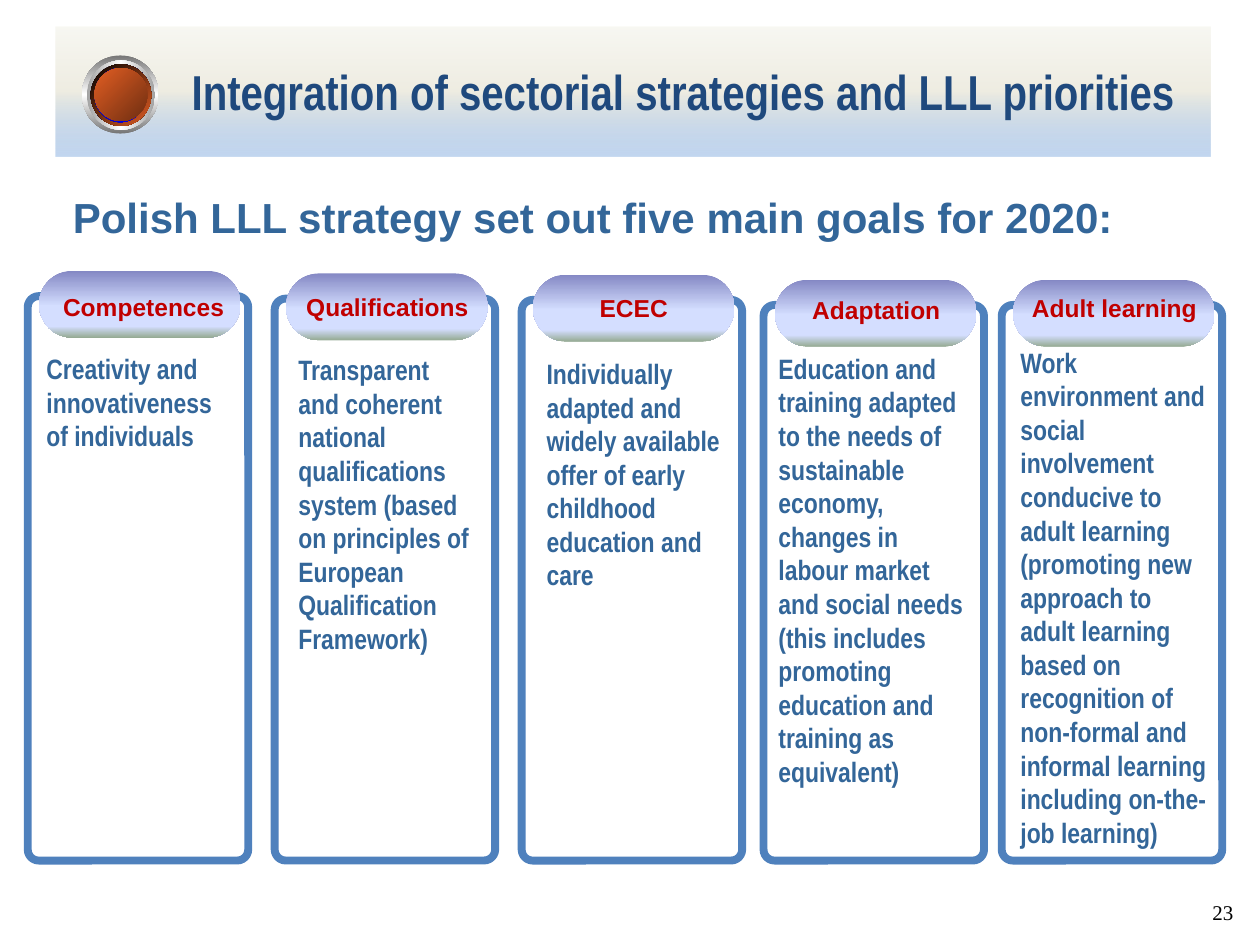
from dataclasses import dataclass
from typing import NamedTuple

from lxml import etree
from pptx import Presentation
from pptx import util as u
from pptx.dml.color import RGBColor
from pptx.enum import shapes, text
from pptx.oxml.ns import qn

COLUMNS, ROWS = 100, 75
CELL = u.Inches(0.1)

NAVY = RGBColor(0x1F, 0x49, 0x7D)
STEEL = RGBColor(0x33, 0x66, 0x99)
FRAME_BLUE = RGBColor(0x4F, 0x81, 0xBD)
RED = RGBColor(0xC0, 0x00, 0x00)
BLACK = RGBColor(0x00, 0x00, 0x00)
WHITE = RGBColor(0xFF, 0xFF, 0xFF)
BANNER_BLUE = RGBColor(0x8B, 0xB2, 0xE2)
CREAM = RGBColor(0xEE, 0xEC, 0xE1)
PALE_CREAM = RGBColor(0xF7, 0xF7, 0xF2)
VIOLET = RGBColor(0x84, 0x88, 0xC4)
LAVENDER = RGBColor(0xD4, 0xDE, 0xFF)
SAGE = RGBColor(0x96, 0xAB, 0x94)
DARK_GREY = RGBColor(0x76, 0x76, 0x76)
GREY = RGBColor(0xA2, 0xA2, 0xA2)
BLUE = RGBColor(0x00, 0x00, 0xFF)
DARK_BLUE = RGBColor(0x00, 0x00, 0xC3)
ORANGE = RGBColor(0xE3, 0x5E, 0x23)
BROWN = RGBColor(0x6E, 0x2E, 0x11)


class Box(NamedTuple):
    column: float
    row: float
    columns: float
    rows: float

    def lengths(self) -> list[int]:
        return [round(value * CELL) for value in self]


class Stop(NamedTuple):
    position: int
    color: RGBColor
    opacity: int = 100


@dataclass(frozen=True)
class Gradient:
    angle: int
    stops: tuple[Stop, ...]


@dataclass(frozen=True)
class Style:
    name: str
    size: int
    color: RGBColor
    bold: bool = True
    alignment: text.PP_ALIGN = text.PP_ALIGN.LEFT


@dataclass(frozen=True)
class Goal:
    column: float
    row: float
    heading: str
    heading_box: Box
    body: str
    body_box: Box


@dataclass(frozen=True)
class Ring:
    box: Box
    gradient: Gradient


CENTER = text.PP_ALIGN.CENTER
TITLE = Style("Arial Narrow", 28, NAVY, alignment=CENTER)
SUBTITLE = Style("Arial", 24, STEEL)
HEADING = Style("Arial", 14, RED, alignment=CENTER)
BODY = Style("Arial Narrow", 16, STEEL)
NUMBER = Style("Times New Roman", 12, BLACK, False, CENTER)

BANNER = Gradient(270, (Stop(0, BANNER_BLUE, 52), Stop(50, CREAM), Stop(100, PALE_CREAM)))
PILL = Gradient(90, (Stop(0, VIOLET), Stop(53, LAVENDER), Stop(83, LAVENDER), Stop(100, SAGE)))

CARD_BOTTOM = 68.3
CARD_WIDTH = 17.5
PILL_WIDTH, PILL_HEIGHT = 16, 5.3
PILL_INSET, PILL_RISE = 0.9, 2

GOALS = (
    Goal(2.2, 23.5, "Competences", Box(3.4, 22.7, 16, 5.1),
         "Creativity and innovativeness of individuals", Box(2.7, 27.4, 16.5, 9.1)),
    Goal(21.8, 23.7, "Qualifications", Box(23, 22.7, 15.5, 3),
         "Transparent and coherent national qualifications system (based on principles "
         "of European Qualification Framework)", Box(22.7, 27.5, 16, 25.2)),
    Goal(41.4, 23.8, "ECEC", Box(43.6, 22.8, 13.4, 4.7),
         "Individually adapted and widely available offer of early childhood education "
         "and care", Box(42.4, 27.8, 16, 19.9)),
    Goal(60.6, 24.2, "Adaptation", Box(61.6, 22.9, 15.9, 3),
         "Education and training adapted to the needs of sustainable economy, changes in "
         "labour market and social needs (this includes promoting education and training "
         "as equivalent)", Box(60.8, 27.4, 16.7, 36)),
    Goal(79.5, 24.2, "Adult learning", Box(79.7, 22.8, 17.5, 3),
         "Work environment and social involvement conducive to adult learning (promoting "
         "new approach to adult learning based on recognition of non-formal and informal "
         "learning including on-the- job learning)", Box(80, 26.9, 16.9, 41.4)),
)

RINGS = (
    Ring(Box(6.5, 4.4, 6.1, 6.2),
         Gradient(90, (Stop(0, DARK_GREY), Stop(50, WHITE), Stop(100, DARK_GREY)))),
    Ring(Box(6.9, 4.8, 5.4, 5.5),
         Gradient(0, (Stop(0, GREY), Stop(50, WHITE), Stop(100, GREY)))),
    Ring(Box(7.2, 5.1, 4.8, 4.9),
         Gradient(45, (Stop(0, WHITE), Stop(50, BLUE), Stop(100, WHITE)))),
    Ring(Box(7.2, 5.1, 4.8, 4.9), Gradient(45, (Stop(0, BLACK), Stop(100, ORANGE)))),
    Ring(Box(7.5, 5.4, 4.1, 4.3),
         Gradient(315, (Stop(0, DARK_BLUE), Stop(50, BLUE), Stop(100, DARK_BLUE)))),
    Ring(Box(7.5, 5.4, 4.2, 4.2), Gradient(45, (Stop(0, ORANGE), Stop(100, BROWN)))),
)


def apply_gradient(shape, gradient: Gradient) -> None:
    shape.fill.gradient()
    fill = shape.fill._xPr.find(qn("a:gradFill"))
    for child in list(fill):
        fill.remove(child)
    stop_list = etree.SubElement(fill, qn("a:gsLst"))
    for stop in gradient.stops:
        entry = etree.SubElement(stop_list, qn("a:gs"), pos=str(stop.position * 1000))
        color = etree.SubElement(entry, qn("a:srgbClr"), val=str(stop.color))
        if stop.opacity < 100:
            etree.SubElement(color, qn("a:alpha"), val=str(stop.opacity * 1000))
    etree.SubElement(fill, qn("a:lin"), ang=str(gradient.angle * 60000), scaled="0")


def add_panel(parent, kind: shapes.MSO_SHAPE, box: Box, gradient: Gradient | None = None,
              corner: float | None = None):
    shape = parent.shapes.add_shape(kind, *box.lengths())
    shape.shadow.inherit = False
    if corner is not None:
        shape.adjustments[0] = corner
    if gradient:
        apply_gradient(shape, gradient)
        shape.line.fill.background()
    else:
        shape.fill.background()
        shape.line.color.rgb = FRAME_BLUE
        shape.line.width = u.Pt(4.5)
    return shape


def write(shape, words: str, style: Style, anchor: text.MSO_ANCHOR):
    frame = shape.text_frame
    frame.word_wrap = True
    frame.vertical_anchor = anchor
    paragraph = frame.paragraphs[0]
    paragraph.alignment = style.alignment
    run = paragraph.add_run()
    run.text = words
    formats = {"name": style.name, "size": u.Pt(style.size), "bold": style.bold}
    for name, value in formats.items():
        setattr(run.font, name, value)
    run.font.color.rgb = style.color
    return paragraph


def add_label(parent, box: Box, words: str, style: Style,
              anchor: text.MSO_ANCHOR = text.MSO_ANCHOR.TOP) -> None:
    write(parent.shapes.add_textbox(*box.lengths()), words, style, anchor)


def add_goal(slide, goal: Goal) -> None:
    rounded = shapes.MSO_SHAPE.ROUNDED_RECTANGLE
    group = slide.shapes.add_group_shape()
    card = Box(goal.column, goal.row, CARD_WIDTH, CARD_BOTTOM - goal.row)
    pill = Box(goal.column + PILL_INSET, goal.row - PILL_RISE, PILL_WIDTH, PILL_HEIGHT)
    add_panel(group, rounded, card, corner=0.05)
    add_panel(group, rounded, pill, PILL, 0.5)
    add_label(group, goal.heading_box, goal.heading, HEADING)
    add_label(slide, goal.body_box, goal.body, BODY)


def add_title(slide) -> None:
    banner = add_panel(slide, shapes.MSO_SHAPE.RECTANGLE, Box(4.4, 2.1, 91.7, 10.3), BANNER)
    paragraph = write(banner, "Integration of sectorial strategies and LLL priorities",
                      TITLE, text.MSO_ANCHOR.MIDDLE)
    paragraph._p.get_or_add_pPr().set("marL", str(u.Inches(0.79)))
    button = slide.shapes.add_group_shape()
    for ring in RINGS:
        add_panel(button, shapes.MSO_SHAPE.OVAL, ring.box, ring.gradient)


def main() -> None:
    presentation = Presentation()
    presentation.slide_width = COLUMNS * CELL
    presentation.slide_height = ROWS * CELL
    slide = presentation.slides.add_slide(presentation.slide_layouts[6])
    add_label(slide, Box(94.1, 69.9, 5.9, 5), "23", NUMBER, text.MSO_ANCHOR.MIDDLE)
    for goal in GOALS:
        add_goal(slide, goal)
    add_title(slide)
    add_label(slide, Box(4.8, 14.7, 87.7, 5),
              "Polish LLL strategy set out five main goals for 2020:", SUBTITLE)
    presentation.save("out.pptx")


if __name__ == "__main__":
    main()
